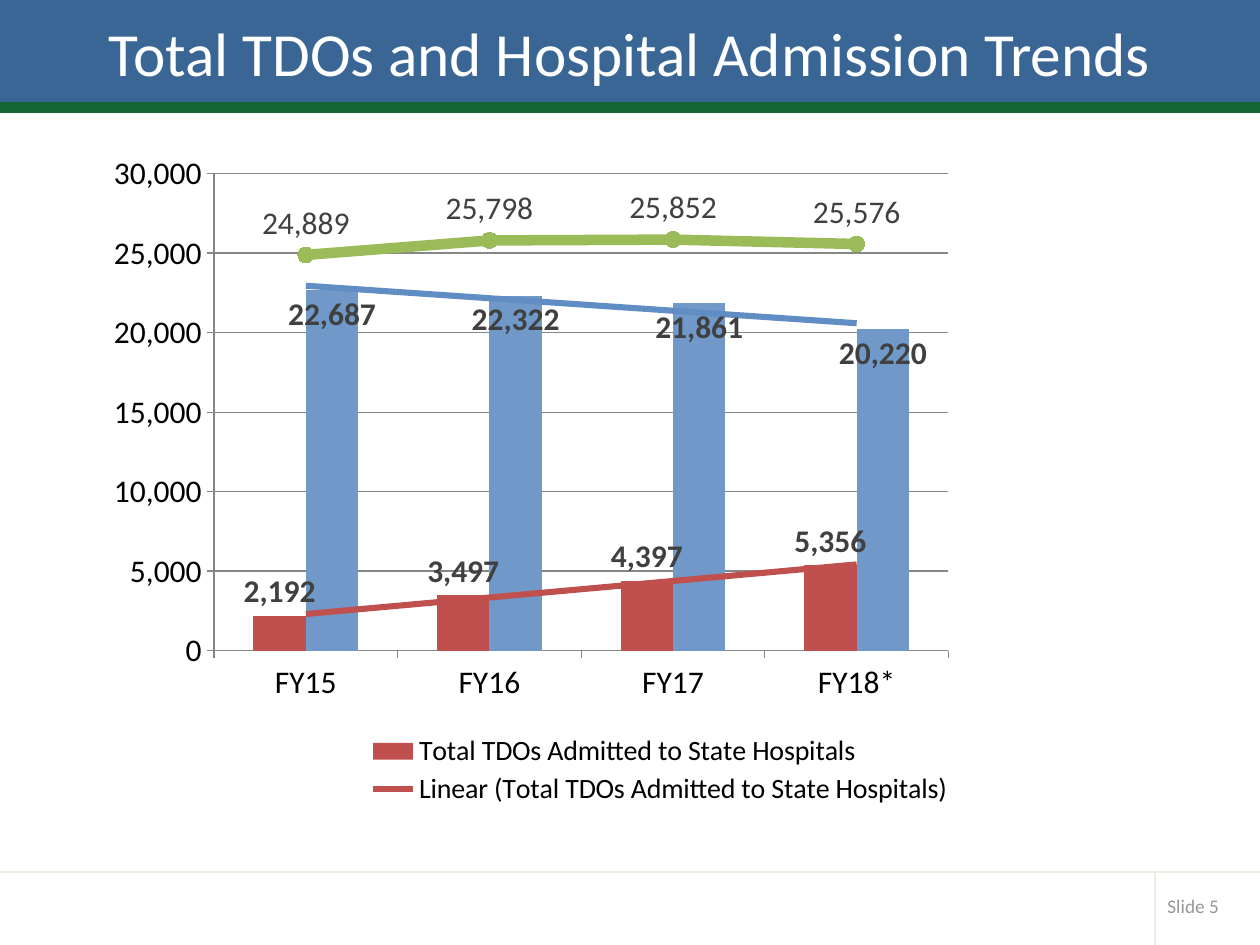
from typing import NamedTuple, Optional

from lxml.etree import SubElement
from pptx import Presentation
from pptx.chart.data import CategoryChartData
from pptx.dml.color import RGBColor
from pptx.enum.chart import XL_CHART_TYPE as ChartType
from pptx.enum.chart import XL_LABEL_POSITION as LabelPosition
from pptx.enum.chart import XL_LEGEND_POSITION as LegendPosition
from pptx.enum.chart import XL_MARKER_STYLE as MarkerStyle
from pptx.enum.chart import XL_TICK_MARK as TickMark
from pptx.enum.shapes import MSO_CONNECTOR as Connector
from pptx.enum.shapes import MSO_SHAPE as Shape
from pptx.enum.text import MSO_ANCHOR as Anchor
from pptx.enum.text import PP_ALIGN as Align
from pptx.oxml import parse_xml
from pptx.oxml.ns import nsdecls, qn
from pptx.util import Emu, Pt

FONT = "Calibri"
NUMBER_FORMAT = "#,##0"
COLORS = {
    "band": "3A6695", "stripe": "136735", "rule": "EEECE1", "footer": "969696",
    "white": "FFFFFF", "text": "000000", "label": "404040", "grid": "868686",
    "state": "C0504D", "private": "7099CA", "private_trend": "608DC4",
    "issued": "9BBB59",
}


class Box(NamedTuple):
    left: int
    top: int
    width: int
    height: int


class Series(NamedTuple):
    name: str
    values: tuple
    color: str
    label_position: LabelPosition
    trend_color: Optional[str] = None


SLIDE = Box(0, 0, 1260, 945)
TITLE_BAND = Box(0, 0, 1260, 104)
BANDS = [(TITLE_BAND, "band"), (Box(0, 104, 1260, 7), "stripe")]
RULES = [Box(0, 872, 1260, 0), Box(1155, 872, 0, 73)]
FOOTER = Box(1155, 887, 94, 37)
CHART = Box(94, 136, 1144, 725)

CATEGORIES = ["FY15", "FY16", "FY17", "FY18*"]
BARS = [
    Series("Total TDOs Admitted to State Hospitals", (2192, 3497, 4397, 5356),
           "state", LabelPosition.OUTSIDE_END, "state"),
    Series("Total TDOs Admitted to Private Hospitals", (22687, 22322, 21861, 20220),
           "private", LabelPosition.INSIDE_END, "private_trend"),
]
ISSUED = Series("Total TDOs Issued", (24889, 25798, 25852, 25576),
                "issued", LabelPosition.ABOVE)
HIDDEN_LEGEND_ENTRIES = (1, 2, 4)


def px(length: int) -> Emu:
    return Emu(round(length * 914400 / 126))


def emu_box(box: Box) -> list:
    return [px(length) for length in box]


def rgb(name: str) -> RGBColor:
    return RGBColor.from_string(COLORS[name])


def style_font(font, size: int, color: str, bold: bool = False) -> None:
    font.name, font.size, font.bold = FONT, Pt(size), bold
    font.color.rgb = rgb(color)


def style_line(line, color: str, width: float) -> None:
    line.color.rgb = rgb(color)
    line.width = Pt(width)


def add_band(slide, box: Box, color: str) -> None:
    shape = slide.shapes.add_shape(Shape.RECTANGLE, *emu_box(box))
    shape.shadow.inherit = False
    shape.fill.solid()
    shape.fill.fore_color.rgb = rgb(color)
    style_line(shape.line, color, 2)


def add_rule(slide, box: Box) -> None:
    left, top, width, height = emu_box(box)
    rule = slide.shapes.add_connector(
        Connector.STRAIGHT, left, top, left + width, top + height)
    style_line(rule.line, "rule", 1)
    SubElement(rule._element.spPr, qn("a:effectLst"))


def write_text(shape, text: str, size: int, color: str, align: Align) -> None:
    frame = shape.text_frame
    frame.word_wrap = True
    frame.vertical_anchor = Anchor.MIDDLE
    frame.text = text
    paragraph = frame.paragraphs[0]
    paragraph.alignment = align
    style_font(paragraph.font, size, color)


def place_title(slide, text: str) -> None:
    title = slide.shapes.title
    title.left, title.top, title.width, title.height = emu_box(TITLE_BAND)
    write_text(title, text, 35, "white", Align.CENTER)
    slide.shapes._spTree.append(title._element)  # in front of the band


def manual_layout(x: float, y: float, width: float, height: float, inner: bool):
    target = '<c:layoutTarget val="inner"/>' if inner else ""
    return parse_xml(
        f'<c:layout {nsdecls("c")}><c:manualLayout>{target}'
        '<c:xMode val="edge"/><c:yMode val="edge"/>'
        f'<c:x val="{x}"/><c:y val="{y}"/><c:w val="{width}"/><c:h val="{height}"/>'
        "</c:manualLayout></c:layout>")


def set_layout(parent, index: int, layout) -> None:
    for old in parent.findall(qn("c:layout")):
        parent.remove(old)
    parent.insert(index, layout)


def move_last_series_to_line(chart) -> None:
    """Turn the last bar series into a line plot on the same axes."""
    bar_chart = chart.plots[0]._element
    series = bar_chart.findall(qn("c:ser"))[-1]
    for invert in series.findall(qn("c:invertIfNegative")):
        series.remove(invert)
    axes = "".join(f'<c:axId val="{axis.get("val")}"/>'
                   for axis in bar_chart.findall(qn("c:axId")))
    line_chart = parse_xml(
        f'<c:lineChart {nsdecls("c")}><c:grouping val="standard"/>'
        f'<c:varyColors val="0"/><c:marker val="1"/>{axes}</c:lineChart>')
    line_chart.insert(2, series)
    bar_chart.addnext(line_chart)


def add_labels(series, item: Series, bold: bool) -> None:
    labels = series.data_labels
    labels.show_value = True
    labels.number_format = NUMBER_FORMAT
    labels.number_format_is_linked = False
    labels.position = item.label_position
    style_font(labels.font, 18, "label", bold)


def add_trend(series, color: str) -> None:
    series._element.find(qn("c:cat")).addprevious(parse_xml(
        f'<c:trendline {nsdecls("c", "a")}><c:spPr><a:ln w="{Pt(3.5)}"><a:solidFill>'
        f'<a:srgbClr val="{COLORS[color]}"/></a:solidFill></a:ln></c:spPr>'
        '<c:trendlineType val="linear"/><c:dispRSqr val="0"/><c:dispEq val="0"/>'
        "</c:trendline>"))


def style_axes(chart) -> None:
    for axis in (chart.category_axis, chart.value_axis):
        axis.major_tick_mark = TickMark.OUTSIDE
        axis.minor_tick_mark = TickMark.NONE
        style_line(axis.format.line, "grid", 0.75)
        style_font(axis.tick_labels.font, 18, "text")
    values = chart.value_axis
    values.minimum_scale, values.maximum_scale, values.major_unit = 0, 30000, 5000
    values.has_major_gridlines = True
    style_line(values.major_gridlines.format.line, "grid", 0.75)
    values.tick_labels.number_format = NUMBER_FORMAT
    values.tick_labels.number_format_is_linked = False


def add_legend(chart) -> None:
    chart.has_legend = True
    legend = chart.legend
    legend.position = LegendPosition.BOTTOM
    legend.include_in_layout = False
    style_font(legend.font, 16, "text")
    set_layout(legend._element, 1, manual_layout(0.23, 0.82, 0.53, 0.11, False))
    for index in reversed(HIDDEN_LEGEND_ENTRIES):
        legend._element.insert(1, parse_xml(
            f'<c:legendEntry {nsdecls("c")}><c:idx val="{index}"/>'
            '<c:delete val="1"/></c:legendEntry>'))


def add_trend_chart(slide) -> None:
    data = CategoryChartData(number_format=NUMBER_FORMAT)
    data.categories = CATEGORIES
    for item in [*BARS, ISSUED]:
        data.add_series(item.name, item.values)
    chart = slide.shapes.add_chart(
        ChartType.COLUMN_CLUSTERED, *emu_box(CHART), data).chart
    chart.has_title = False
    style_font(chart.font, 18, "text")
    move_last_series_to_line(chart)
    bar_plot, line_plot = chart.plots
    bar_plot.gap_width, bar_plot.overlap = 150, 0
    bar_plot.vary_by_categories = False

    # Columns with linear trends
    for series, item in zip(bar_plot.series, BARS):
        series.format.fill.solid()
        series.format.fill.fore_color.rgb = rgb(item.color)
        add_labels(series, item, bold=True)
        add_trend(series, item.trend_color)

    # Line with round markers
    issued = line_plot.series[0]
    issued.smooth = False
    style_line(issued.format.line, ISSUED.color, 6)
    issued.marker.style, issued.marker.size = MarkerStyle.CIRCLE, 9
    issued.marker.format.fill.solid()
    issued.marker.format.fill.fore_color.rgb = rgb(ISSUED.color)
    style_line(issued.marker.format.line, ISSUED.color, 0.75)
    add_labels(issued, ISSUED, bold=False)

    style_axes(chart)
    add_legend(chart)
    plot_area = chart._chartSpace.chart.plotArea
    set_layout(plot_area, 0, manual_layout(0.105, 0.052, 0.642, 0.658, True))


def main() -> None:
    presentation = Presentation()
    presentation.slide_width, presentation.slide_height = px(SLIDE.width), px(SLIDE.height)
    slide = presentation.slides.add_slide(presentation.slide_layouts[5])

    # Bands, rules and footer
    for box, color in BANDS:
        add_band(slide, box, color)
    for box in RULES:
        add_rule(slide, box)
    write_text(slide.shapes.add_textbox(*emu_box(FOOTER)), "Slide 5", 11, "footer", Align.LEFT)

    # Chart and title
    add_trend_chart(slide)
    place_title(slide, "Total TDOs and Hospital Admission Trends")
    presentation.save("out.pptx")


if __name__ == "__main__":
    main()
